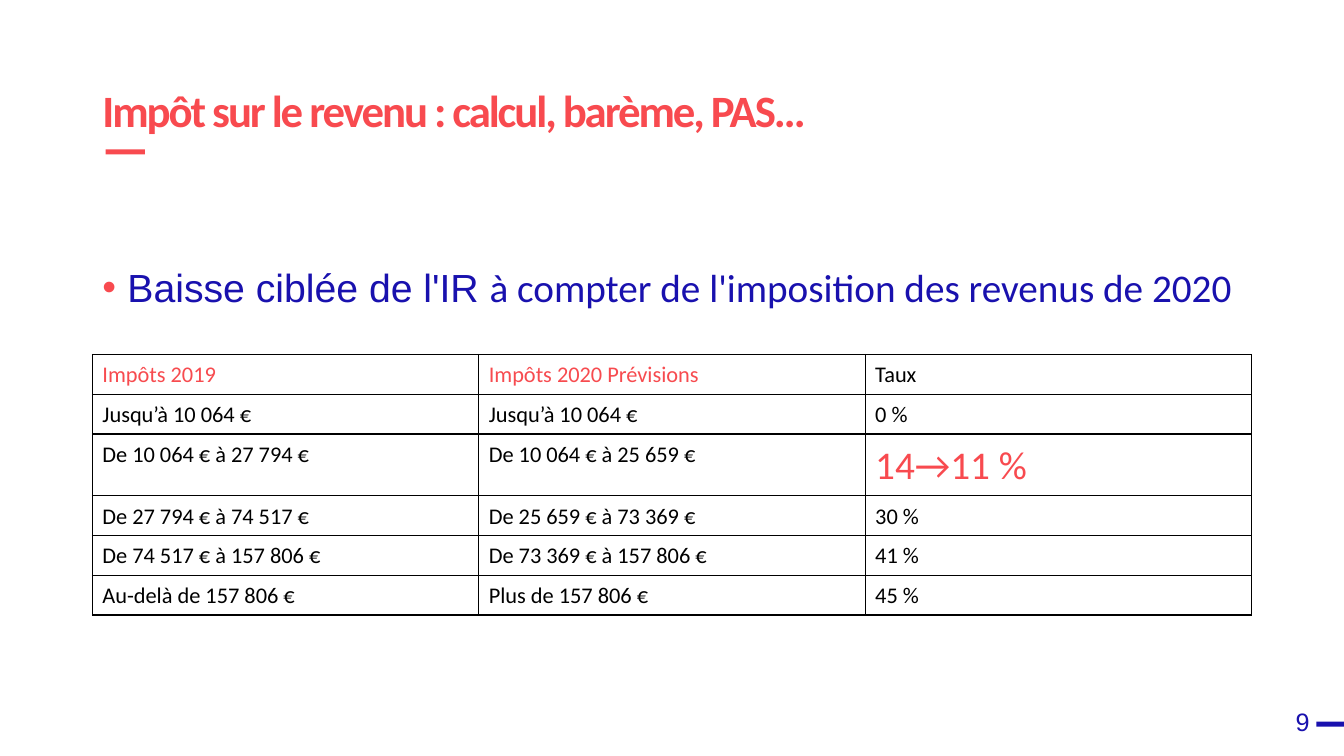
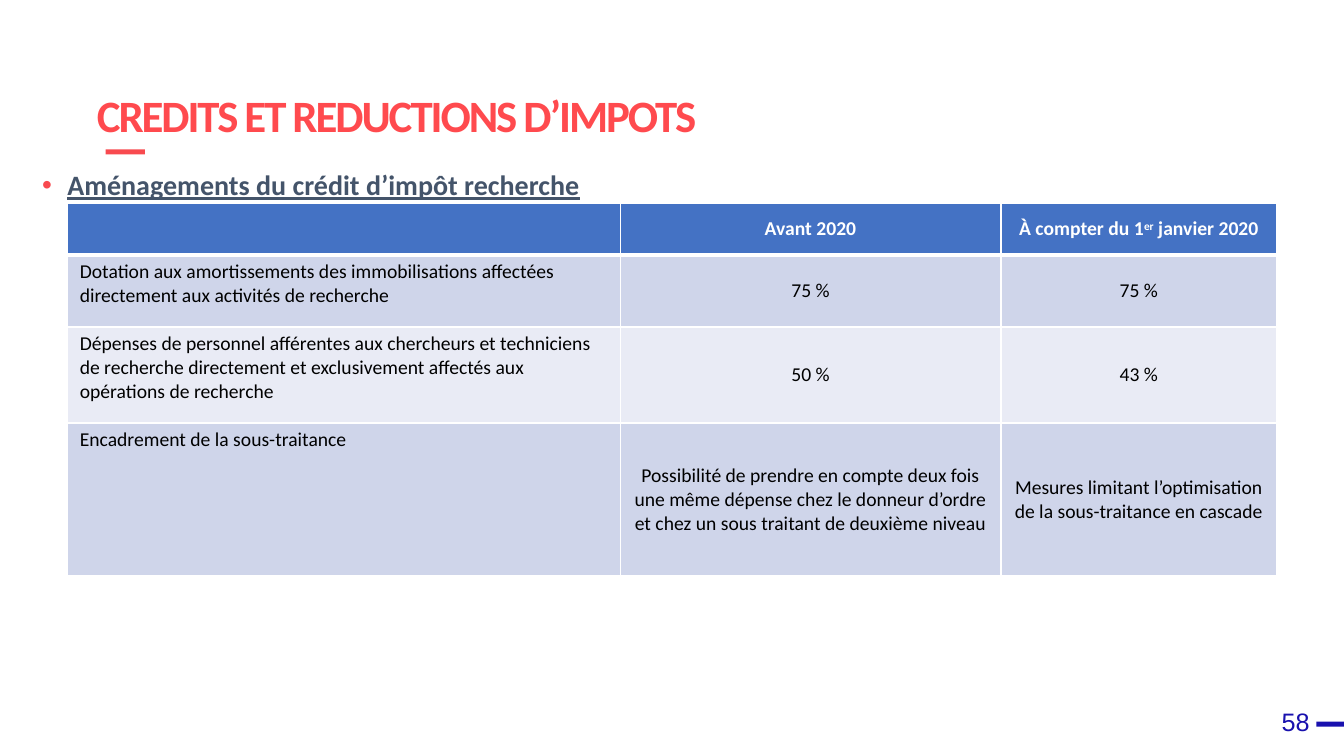
"""Build two slides on French income tax and tax credits."""
from dataclasses import dataclass, field
from typing import Any

import lxml.etree
import pptx
import pptx.dml.color
import pptx.enum.shapes
import pptx.enum.text
import pptx.oxml.ns
import pptx.util

Pt = pptx.util.Pt
ALIGN = pptx.enum.text.PP_ALIGN
ANCHOR = pptx.enum.text.MSO_ANCHOR
RECT = pptx.enum.shapes.MSO_SHAPE.RECTANGLE
RED, TITLE_RED, HEAD_RED = "F84A4F", "FF4A4E", "F74B4F"
BLUE, SLATE, BLACK, WHITE = "1911AE", "44546A", "000000", "FFFFFF"
HEADER, BAND_DARK, BAND_LIGHT = "4472C4", "CFD5EA", "E9EBF5"


@dataclass(frozen=True)
class Box:
    """A rectangle in points."""
    x: float
    y: float
    w: float
    h: float

    def place(self) -> tuple:
        """Return the four lengths."""
        return Pt(self.x), Pt(self.y), Pt(self.w), Pt(self.h)


@dataclass(frozen=True)
class Run:
    """A stretch of text in one format."""
    text: str
    size: float
    color: str
    name: str = "Calibri"
    font: dict = field(default_factory=dict)
    attrs: dict = field(default_factory=dict)


@dataclass(frozen=True)
class Cell:
    """The content and look of a table cell."""
    runs: list
    fill: str = ""
    para: dict = field(default_factory=dict)
    anchor: Any = ANCHOR.TOP
    borders: dict = field(default_factory=dict)


def rgb(color: str) -> pptx.dml.color.RGBColor:
    """Turn a hex string into a colour."""
    return pptx.dml.color.RGBColor.from_string(color)


def apply(obj: Any, values: dict) -> None:
    """Set every attribute in values."""
    for key, value in values.items():
        setattr(obj, key, value)


def sub(parent: Any, tag: str, **attrs: str) -> Any:
    """Append a DrawingML element."""
    return lxml.etree.SubElement(parent, pptx.oxml.ns.qn(tag), attrs)


def write(p: Any, runs: list, para: dict) -> None:
    """Fill a paragraph with runs."""
    apply(p, para)
    for item in runs:
        r = p.add_run()
        r.text = item.text
        apply(r.font, {"name": item.name, "size": Pt(item.size), **item.font})
        r.font.color.rgb = rgb(item.color)
        for key, value in item.attrs.items():
            r.font._element.set(key, value)


def add_text(s: Any, box: Box, runs: list, para: dict) -> Any:
    """Add a wrapping text box and return its paragraph."""
    tf = s.shapes.add_textbox(*box.place()).text_frame
    tf.word_wrap = True
    write(tf.paragraphs[0], runs, para)
    return tf.paragraphs[0]


def add_bullet(s: Any, box: Box, runs: list) -> None:
    """Add a line with a red bullet."""
    p = add_text(s, box, [], {"line_spacing": 0.9})
    pr = p._p.get_or_add_pPr()
    pr.set("marL", str(Pt(18)))
    pr.set("indent", str(-Pt(18)))
    sub(sub(pr, "a:buClr"), "a:srgbClr", val=RED)
    sub(pr, "a:buFont", typeface="Arial")
    sub(pr, "a:buChar", char="•")
    write(p, runs, {})


def add_bar(s: Any, box: Box, color: str) -> None:
    """Add a plain coloured bar."""
    sp = s.shapes.add_shape(RECT, *box.place())
    sp.shadow.inherit = False
    sp.fill.solid()
    sp.fill.fore_color.rgb = rgb(color)
    sp.line.fill.background()


def add_slide(prs: Any, title: str, box: Box, anchor: Any, color: str, number: int) -> Any:
    """Add a slide with the shared title, bars and page number."""
    s = prs.slides.add_slide(prs.slide_layouts[5])
    sp = s.shapes.title
    apply(sp, dict(zip(("left", "top", "width", "height"), box.place())))
    tf = sp.text_frame
    apply(tf, {"word_wrap": True, "vertical_anchor": anchor,
               "auto_size": pptx.enum.text.MSO_AUTO_SIZE.NONE})
    run = Run(title, 32, color, font={"bold": True}, attrs={"spc": "-150"})
    write(tf.paragraphs[0], [run], {"alignment": ALIGN.LEFT, "line_spacing": 0.9})
    add_bar(s, Box(75.5, 106.6, 28, 3.6), RED)
    add_bar(s, Box(940.2, 515.5, 19.8, 3.6), BLUE)
    add_text(s, Box(872, 501, 70.5, 28.8), [Run(str(number), 18, BLUE, "Arial")],
             {"alignment": ALIGN.RIGHT})
    return s


def set_borders(cell: Any, color: str, widths: dict) -> None:
    """Draw the four borders of a cell."""
    pr = cell._tc.get_or_add_tcPr()
    for i, side in enumerate("LRTB"):
        ln = sub(pr, f"a:ln{side}", w=str(Pt(widths.get(side, 1))))
        sub(sub(ln, "a:solidFill"), "a:srgbClr", val=color)
        pr.insert(i, ln)


def add_table(s: Any, box: Box, cols: list, heights: list, rows: list,
              border: str, inset: float) -> None:
    """Add a table with its cells formatted one by one."""
    table = s.shapes.add_table(len(rows), len(cols), *box.place()).table
    apply(table, {"first_row": False, "horz_banding": False})
    for column, width in zip(table.columns, cols):
        column.width = Pt(width)
    for i, (height, row) in enumerate(zip(heights, rows)):
        table.rows[i].height = Pt(height)
        for j, item in enumerate(row):
            cell = table.cell(i, j)
            apply(cell, {"margin_left": Pt(inset), "margin_right": Pt(inset),
                         "margin_top": Pt(3.6), "margin_bottom": Pt(3.6),
                         "vertical_anchor": item.anchor})
            if item.fill:
                cell.fill.solid()
                cell.fill.fore_color.rgb = rgb(item.fill)
            else:
                cell.fill.background()
            set_borders(cell, border, item.borders)
            write(cell.text_frame.paragraphs[0], item.runs, item.para)


def scale_cell(text: str, size: float = 16, color: str = BLACK) -> Cell:
    """Make a cell of the tax scale."""
    return Cell([Run(text, size, color)], para={"line_spacing": 1.07})


def income_tax(prs: Any) -> None:
    """Build the tax scale slide."""
    s = add_slide(prs, "Impôt sur le revenu : calcul, barème, PAS…",
                  Box(66, 28.8, 828, 104.4), ANCHOR.MIDDLE, RED, 9)
    add_bullet(s, Box(66, 188, 828, 40), [
        Run("Baisse ciblée de l'IR ", 28, BLUE, "Arial"),
        Run("à compter de l'imposition des revenus de 2020", 28, BLUE)])
    scale = [
        ("Jusqu’à 10 064 €", "Jusqu’à 10 064 €", "0 %"),
        ("De 10 064 € à 27 794 €", "De 10 064 € à 25 659 €", "14→11 %"),
        ("De 27 794 € à 74 517 €", "De 25 659 € à 73 369 €", "30 %"),
        ("De 74 517 € à 157 806 €", "De 73 369 € à 157 806 €", "41 %"),
        ("Au-delà de 157 806 €", "Plus de 157 806 €", "45 %")]
    rows = [[scale_cell("Impôts 2019", color=HEAD_RED),
             scale_cell("Impôts 2020 Prévisions", color=HEAD_RED), scale_cell("Taux")]]
    rows += [[scale_cell(text) for text in line] for line in scale]
    rows[2][2] = scale_cell(scale[1][2], 28, RED)
    heights = [28.4, 28.4, 44.2, 28.4, 28.4, 28.4]
    add_table(s, Box(66, 253.2, 828, sum(heights)), [276] * 3, heights, rows, BLACK, 7.2)


def tax_credits(prs: Any) -> None:
    """Build the research tax credit slide."""
    s = add_slide(prs, "CREDITS ET REDUCTIONS D’IMPOTS",
                  Box(62, 59.8, 516, 45.4), ANCHOR.BOTTOM, TITLE_RED, 58)
    add_bullet(s, Box(23, 118.8, 804, 40), [
        Run("Aménagements du crédit d’impôt recherche", 20, SLATE,
            font={"bold": True, "underline": True})])
    center = {"alignment": ALIGN.CENTER}
    bold = {"bold": True}
    heads = [[], [Run("Avant 2020", 14, WHITE, font=bold)],
             [Run("À compter du 1", 14, WHITE, font=bold),
              Run("er", 14, WHITE, font=bold, attrs={"baseline": "30000"}),
              Run(" janvier 2020", 14, WHITE, font=bold)]]
    rows = [[Cell(runs, HEADER, center, ANCHOR.MIDDLE, {"B": 3}) for runs in heads]]
    body = [
        ("Dotation aux amortissements des immobilisations affectées directement "
         "aux activités de recherche", "75 %", "75 %"),
        ("Dépenses de personnel afférentes aux chercheurs et techniciens de recherche "
         "directement et exclusivement affectés aux opérations de recherche",
         "50 %", "43 %"),
        ("Encadrement de la sous-traitance",
         "Possibilité de prendre en compte deux fois une même dépense chez le donneur "
         "d’ordre et chez un sous traitant de deuxième niveau",
         "Mesures limitant l’optimisation de la sous-traitance en cascade")]
    for i, line in enumerate(body):
        fill = BAND_LIGHT if i % 2 else BAND_DARK
        borders = {"T": 1 if i else 3}
        rows.append([Cell([Run(text, 14, BLACK, font={"bold": False})], fill,
                          center if j else {}, ANCHOR.MIDDLE if j else ANCHOR.TOP, borders)
                     for j, text in enumerate(line)])
    cols, heights = [395, 272, 197], [36.5, 51.6, 68.6, 109.3]
    add_table(s, Box(48, 145.5, sum(cols), sum(heights)), cols, heights, rows, WHITE, 9)


def main() -> None:
    """Build and save the presentation."""
    prs = pptx.Presentation()
    apply(prs, {"slide_width": Pt(960), "slide_height": Pt(540)})
    income_tax(prs)
    tax_credits(prs)
    prs.save("out.pptx")


if __name__ == "__main__":
    main()
